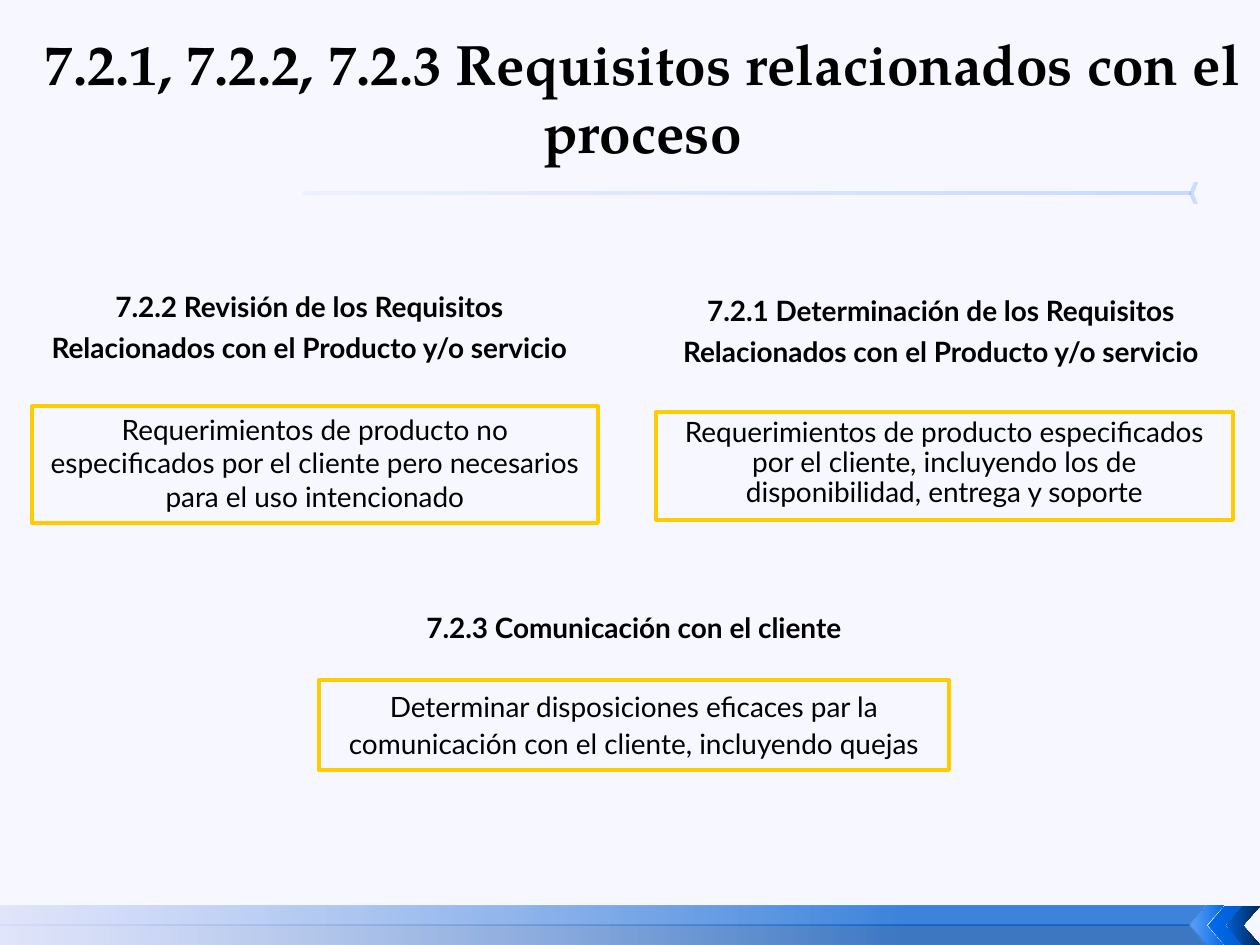
from lxml.etree import SubElement
from pptx import Presentation
from pptx.dml.color import RGBColor
from pptx.enum.shapes import MSO_SHAPE as Preset
from pptx.enum.text import MSO_ANCHOR as Anchor, MSO_AUTO_SIZE as AutoSize, PP_ALIGN as Align
from pptx.oxml.ns import qn
from pptx.util import Emu, Pt

EMU_PER_PX = 914400 / 126


def px(length):
    return Emu(round(length * EMU_PER_PX))


def color(hex_value):
    return RGBColor.from_string(hex_value)


def write_text(frame, text, *, font, size, bold=False, spacing=None,
               anchor=Anchor.TOP, auto_size=AutoSize.SHAPE_TO_FIT_TEXT):
    frame.word_wrap = True
    frame.auto_size = auto_size
    frame.vertical_anchor = anchor
    paragraph = frame.paragraphs[0]
    paragraph.alignment = Align.CENTER
    paragraph.line_spacing = spacing
    run = paragraph.add_run()
    run.text = text
    run.font.name = font
    run.font.size = Pt(size)
    run.font.bold = bold
    run.font.color.rgb = color("000000")


class SlideBuilder:
    title_font = "TeX Gyre Pagella"
    body_font = "Lato"
    body_size = 16
    background = "F7F7FF"
    frame_color = "FFCC00"

    def __init__(self, presentation):
        self.slide = presentation.slides.add_slide(presentation.slide_layouts[5])
        self.shapes = self.slide.shapes
        fill = self.slide.background.fill
        fill.solid()
        fill.fore_color.rgb = color(self.background)

    def gradient(self, shape, stops):
        """Fill from right to left; each stop is (position %, colour, opacity %)."""
        shape.shadow.inherit = False
        shape.line.fill.background()
        shape.fill.gradient()
        shape.fill.gradient_angle = 180
        for stop, (position, hex_value, _) in zip(shape.fill.gradient_stops, stops):
            stop.position = position / 100
            stop.color.rgb = color(hex_value)
        gradient_colors = shape._element.spPr.iter(qn("a:srgbClr"))
        for element, (_, _, opacity) in zip(list(gradient_colors), stops):
            SubElement(element, qn("a:alpha")).set("val", str(opacity * 1000))

    def band(self, points, stops):
        corners = [(px(x), px(y)) for x, y in points]
        builder = self.shapes.build_freeform(*corners[0], scale=1.0)
        builder.add_line_segments(corners[1:], close=True)
        self.gradient(builder.convert_to_shape(), stops)

    def ornament(self, preset, box, stops, flipped=False):
        shape = self.shapes.add_shape(preset, *map(px, box))
        self.gradient(shape, stops)
        if flipped:
            shape._element.spPr.xfrm.set("flipH", "1")

    def title(self, text, box):
        title = self.shapes.title
        title.left, title.top, title.width, title.height = map(px, box)
        write_text(title.text_frame, text, font=self.title_font, size=32.4, bold=True,
                   anchor=Anchor.MIDDLE, auto_size=AutoSize.NONE)

    def heading(self, text, box):
        shape = self.shapes.add_textbox(*map(px, box))
        write_text(shape.text_frame, text, font=self.body_font, size=self.body_size,
                   bold=True, spacing=1.2)

    def framed_text(self, text, box, spacing):
        shape = self.shapes.add_shape(Preset.RECTANGLE, *map(px, box))
        shape.shadow.inherit = False
        shape.fill.background()
        shape.line.color.rgb = color(self.frame_color)
        shape.line.width = Pt(2.25)
        write_text(shape.text_frame, text, font=self.body_font, size=self.body_size,
                   spacing=spacing)


def main():
    presentation = Presentation()
    presentation.slide_width, presentation.slide_height = px(1260), px(945)
    builder = SlideBuilder(presentation)

    # Footer: two bands meeting at a notch, then three chevrons
    band_middle, band_right, notch = 925, 1207, 1189
    for edge, shade in ((945, "004EAF"), (906, "005ED1")):
        points = [(band_right, edge), (0, edge), (0, band_middle), (notch, band_middle)]
        builder.band(points, [(25, shade, 75), (100, "CCD4F8", 50)])
    chevron_shades = [("006AED", 60, "006AED"), ("006AED", 100, "005ED1"),
                      ("005ED1", 100, "002757")]
    for index, (start, opacity, end) in enumerate(chevron_shades):
        builder.ornament(Preset.CHEVRON, (1190 + 18 * index, 906, 34, 39),
                         [(0, start, opacity), (100, end, 100)], flipped=True)

    # Rule below the title
    builder.ornament(Preset.CHEVRON, (1190, 183, 8, 21),
                     [(0, "006AED", 20), (100, "006AED", 15)], flipped=True)
    builder.ornament(Preset.RECTANGLE, (304, 192, 886, 3),
                     [(0, "006AED", 20), (100, "006AED", 4)])

    builder.title("7.2.1, 7.2.2, 7.2.3 Requisitos relacionados con el proceso",
                  (25, 38, 1235, 117))

    requirements = [
        ("7.2.1 Determinación de los Requisitos Relacionados con el Producto y/o servicio",
         (647, 281, 588, 134),
         "Requerimientos de producto especificados por el cliente, incluyendo los de "
         "disponibilidad, entrega y soporte",
         (656, 412, 577, 108), 0.9),
        ("7.2.2 Revisión de los Requisitos Relacionados con el Producto y/o servicio",
         (32, 277, 555, 134),
         "Requerimientos de producto no especificados por el cliente pero necesarios "
         "para el uso intencionado",
         (32, 406, 566, 117), 1.0),
        ("7.2.3 Comunicación con el cliente",
         (340, 598, 588, 53),
         "Determinar disposiciones eficaces par la comunicación con el cliente, "
         "incluyendo quejas",
         (319, 680, 630, 90), 1.1),
    ]
    for heading, heading_box, detail, detail_box, spacing in requirements:
        builder.framed_text(detail, detail_box, spacing)
        builder.heading(heading, heading_box)

    presentation.save("out.pptx")


if __name__ == "__main__":
    main()
